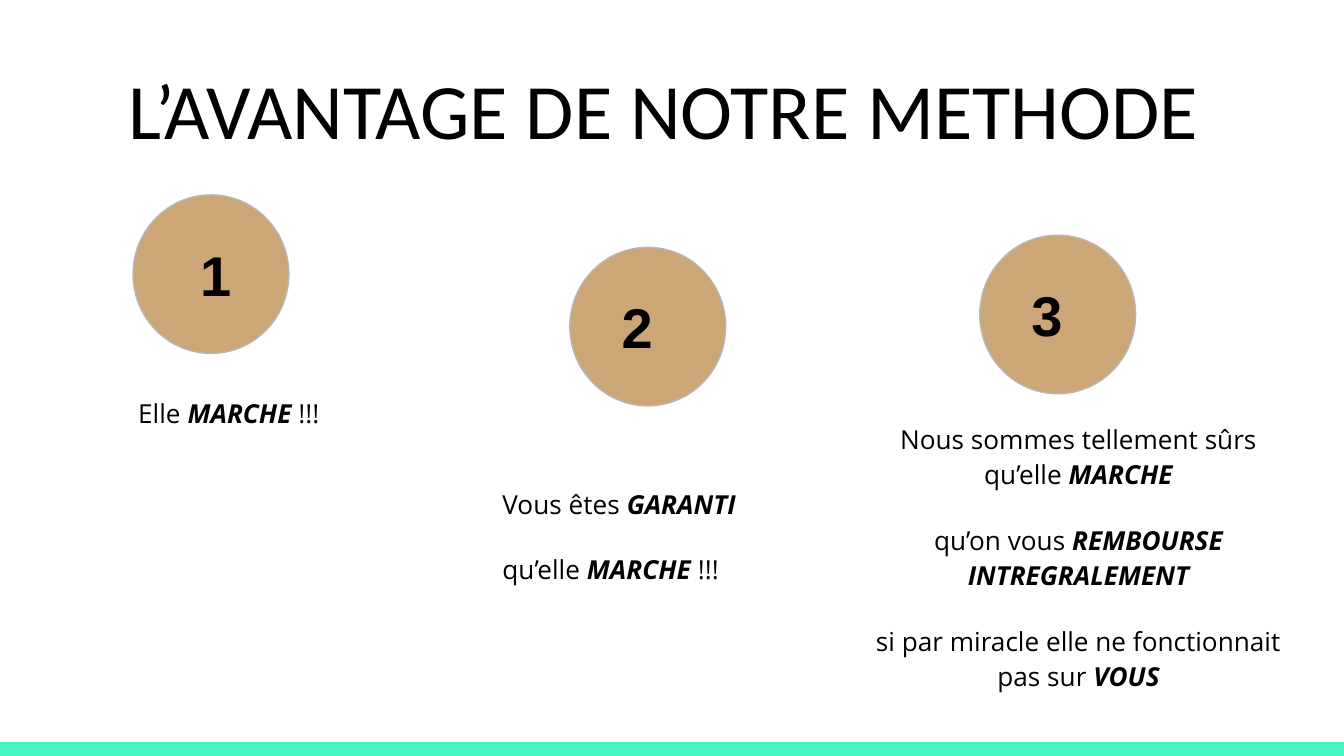
"""Build the slide on the three advantages of the method."""
from pptx import Presentation
from pptx import util as u
from pptx.dml.color import RGBColor
from pptx.enum import shapes, text

PX = 4572
BLACK = RGBColor(0x00, 0x00, 0x00)
MINT = RGBColor(0x43, 0xF5, 0xC1)
TAN = RGBColor(0xCC, 0xA6, 0x77)
GREY = RGBColor(0xB7, 0xB7, 0xB7)
LEFT, CENTER = text.PP_ALIGN.LEFT, text.PP_ALIGN.CENTER
TOP, MIDDLE, BOTTOM = text.MSO_ANCHOR.TOP, text.MSO_ANCHOR.MIDDLE, text.MSO_ANCHOR.BOTTOM

BADGES = [("1", 198, 290, 66), ("2", 848, 368, 43), ("3", 1458, 350, 43)]
REASONS = [
    ((86, 565, 542, 466), LEFT, [["Elle ", "*MARCHE ", "!!!"]]),
    ((1165, 604, 780, 338), CENTER, [
        ["Nous sommes tellement sûrs qu’elle ", "*MARCHE"],
        ["qu’on vous ", "*REMBOURSE INTREGRALEMENT"],
        ["si par miracle elle ne fonctionnait pas sur ", "*VOUS"],
    ]),
    ((628, 701, 716, 300), LEFT, [
        ["Vous êtes ", "*GARANTI"],
        ["qu’elle ", "*MARCHE", " !!!"],
    ]),
]


def px(*lengths):
    return [u.Emu(length * PX) for length in lengths]


def set_frame(frame, anchor, left=20, right=20):
    frame.word_wrap = True
    frame.vertical_anchor = anchor
    frame.margin_left, frame.margin_right = px(left, right)
    frame.margin_top, frame.margin_bottom = px(20, 20)


def set_font(paragraph, name, size, bold=None):
    font = paragraph.font
    font.name, font.size, font.bold = name, u.Pt(size), bold
    font.color.rgb = BLACK


def add_filled(slide, kind, box, color):
    shape = slide.shapes.add_shape(kind, *px(*box))
    shape.shadow.inherit = False
    shape.fill.solid()
    shape.fill.fore_color.rgb = color
    return shape


def add_footer_bar(slide):
    bar = add_filled(slide, shapes.MSO_SHAPE.RECTANGLE, (0, 1104, 2000, 21), MINT)
    bar.line.fill.background()


def add_title(slide, wording):
    frame = slide.shapes.add_textbox(*px(68, 69, 1864, 182)).text_frame
    set_frame(frame, BOTTOM, right=46)
    title = frame.paragraphs[0]
    title.text = wording
    title.alignment = CENTER
    set_font(title, "Calibri", 42)


def add_reason(slide, box, alignment, lines):
    """Add a text block in which pieces that start with * are emphasised."""
    frame = slide.shapes.add_textbox(*px(*box)).text_frame
    set_frame(frame, TOP)
    for index, pieces in enumerate(lines):
        line = frame.add_paragraph() if index else frame.paragraphs[0]
        line.alignment = alignment
        line.line_spacing = 1.13
        line.space_before = u.Pt(16 if index else 0)
        line._p.get_or_add_pPr().set("marL", str(100 * PX))
        set_font(line, "Open Sans", 14)
        for piece in pieces:
            run = line.add_run()
            run.text = piece.lstrip("*")
            if piece.startswith("*"):
                run.font.bold = run.font.italic = True


def add_badge(slide, number, left, top, inset):
    badge = add_filled(slide, shapes.MSO_SHAPE.OVAL, (left, top, 232, 236), TAN)
    badge.line.color.rgb = GREY
    badge.line.width = u.Pt(0.75)
    set_frame(badge.text_frame, MIDDLE, left=inset)
    label = badge.text_frame.paragraphs[0]
    label.text = number
    label.alignment = LEFT
    set_font(label, "Arial", 30, bold=True)


def main():
    deck = Presentation()
    deck.slide_width, deck.slide_height = px(2000, 1125)
    slide = deck.slides.add_slide(deck.slide_layouts[6])
    add_footer_bar(slide)
    add_title(slide, "L’AVANTAGE DE NOTRE METHODE")
    for reason in REASONS:
        add_reason(slide, *reason)
    for badge in BADGES:
        add_badge(slide, *badge)
    deck.save("out.pptx")


if __name__ == "__main__":
    main()
